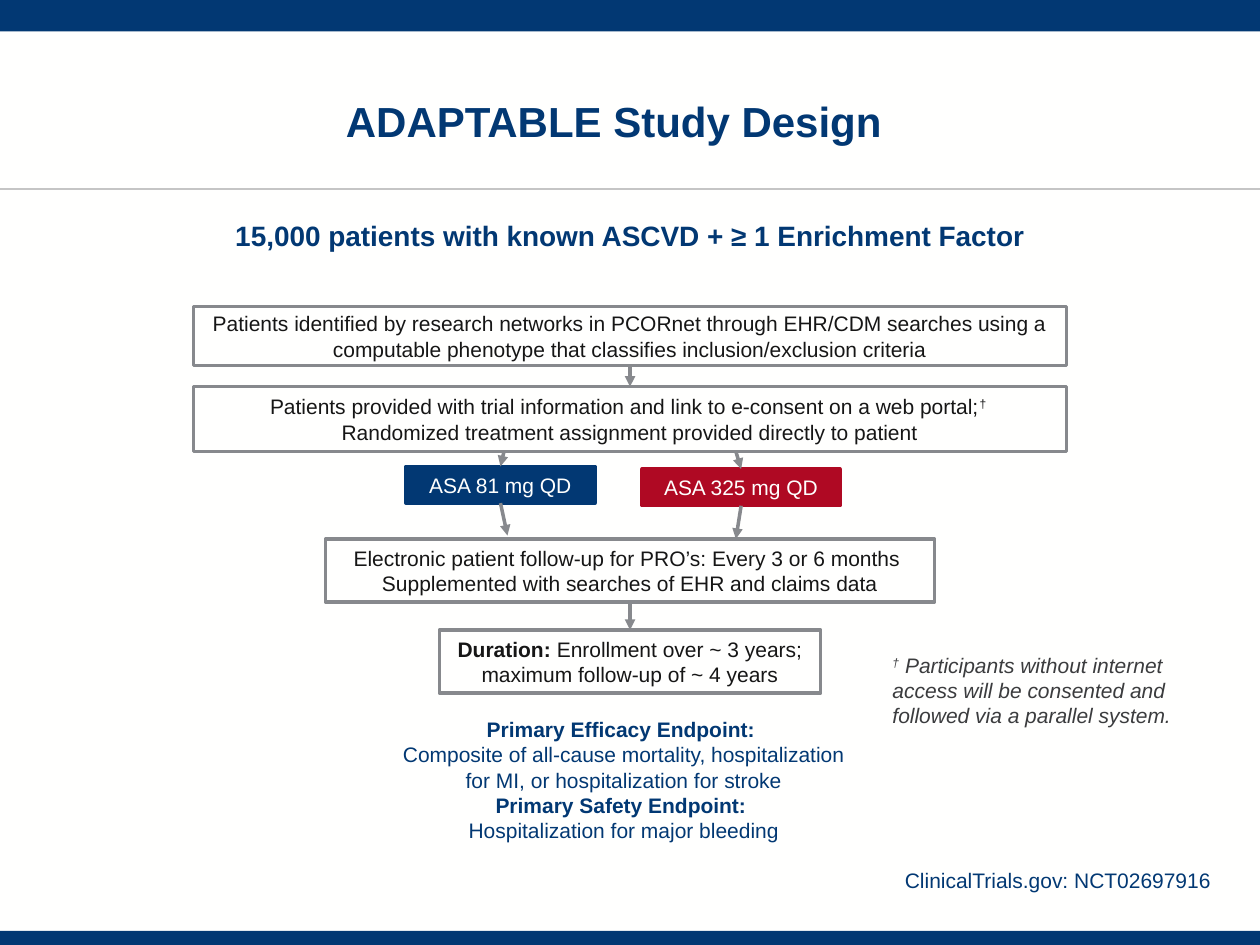
from dataclasses import dataclass

from lxml import etree
from pptx import Presentation
from pptx.dml.color import RGBColor
from pptx.enum.shapes import MSO_CONNECTOR, MSO_SHAPE
from pptx.enum.text import MSO_ANCHOR, MSO_AUTO_SIZE, PP_ALIGN
from pptx.oxml.ns import qn
from pptx.util import Pt

RECTANGLE = MSO_SHAPE.RECTANGLE
STRAIGHT = MSO_CONNECTOR.STRAIGHT
LEFT, CENTER = PP_ALIGN.LEFT, PP_ALIGN.CENTER
TOP, MIDDLE, BOTTOM = MSO_ANCHOR.TOP, MSO_ANCHOR.MIDDLE, MSO_ANCHOR.BOTTOM
SIDE_TOP, SIDE_BOTTOM = 0, 2
WIDTH, HEIGHT = 720, 540


@dataclass(frozen=True)
class Theme:
    font: str = "Arial"
    navy: str = "023873"
    red: str = "AF0923"
    gray: str = "87898D"
    rule: str = "C5C5C5"
    ink: str = "161616"
    note: str = "3B3C3E"
    paper: str = "FFFFFE"
    title_size: int = 24
    heading_size: int = 16
    body_size: int = 12


THEME = Theme()
BOLD = {"bold": True}
SUPERSCRIPT = {"superscript": True}


def color(value):
    return RGBColor.from_string(value)


def format_frame(frame, anchor, inset):
    """Set wrapping, anchor and margins; inset is (horizontal, vertical)."""
    horizontal, vertical = inset
    settings = {
        "word_wrap": True, "auto_size": MSO_AUTO_SIZE.NONE, "vertical_anchor": anchor,
        "margin_left": Pt(horizontal), "margin_right": Pt(horizontal),
        "margin_top": Pt(vertical), "margin_bottom": Pt(vertical),
    }
    for name, value in settings.items():
        setattr(frame, name, value)


def write_text(frame, paragraphs, ink, size=THEME.body_size, align=CENTER,
               spacing=1.0, **base):
    """Fill a frame; each paragraph is a list of (text, format) runs."""
    for index, runs in enumerate(paragraphs):
        paragraph = frame.paragraphs[0] if index == 0 else frame.add_paragraph()
        paragraph.alignment = align
        paragraph.line_spacing = spacing
        paragraph.space_before = Pt(0)
        for text, extra in runs:
            run = paragraph.add_run()
            run.text = text
            values = {"name": THEME.font, "size": Pt(size), "bold": False, **base, **extra}
            raised = values.pop("superscript", False)
            for name, value in values.items():
                setattr(run.font, name, value)
            run.font.color.rgb = color(ink)
            if raised:
                run._r.get_or_add_rPr().set("baseline", "30000")


def add_text(slide, box, paragraphs, ink, anchor=TOP, inset=(7.2, 3.6), **style):
    shape = slide.shapes.add_textbox(*map(Pt, box))
    format_frame(shape.text_frame, anchor, inset)
    write_text(shape.text_frame, paragraphs, ink, **style)


def add_box(slide, box, fill, line=None):
    shape = slide.shapes.add_shape(RECTANGLE, *map(Pt, box))
    shape.shadow.inherit = False
    shape.fill.solid()
    shape.fill.fore_color.rgb = color(fill)
    if line:
        shape.line.color.rgb = color(line)
        shape.line.width = Pt(2)
    else:
        shape.line.fill.background()
    return shape


def add_step(slide, box, paragraphs, fill=THEME.paper, line=THEME.gray, ink=THEME.ink):
    shape = add_box(slide, box, fill, line)
    format_frame(shape.text_frame, MIDDLE, (7.2, 3.6))
    write_text(shape.text_frame, paragraphs, ink)
    return shape


def add_line(slide, start, end, line, width):
    connector = slide.shapes.add_connector(STRAIGHT, *map(Pt, (*start, *end)))
    connector.line.color.rgb = color(line)
    connector.line.width = Pt(width)
    etree.SubElement(connector._element.spPr, qn("a:effectLst"))
    return connector


def add_arrow(slide, source, target):
    """Join shapes at bottom and top middles; a point leaves that end free."""
    free_start = source if isinstance(source, tuple) else (0, 0)
    free_end = target if isinstance(target, tuple) else (0, 0)
    connector = add_line(slide, free_start, free_end, THEME.gray, 2)
    if not isinstance(source, tuple):
        connector.begin_connect(source, SIDE_BOTTOM)
    if not isinstance(target, tuple):
        connector.end_connect(target, SIDE_TOP)
    etree.SubElement(connector.line._get_or_add_ln(), qn("a:tailEnd"), type="triangle")


def centered(top, width, height):
    return (WIDTH - width) / 2, top, width, height


def add_frame(slide):
    slide.background.fill.solid()
    slide.background.fill.fore_color.rgb = color(THEME.paper)
    add_line(slide, (0, 108), (WIDTH, 108), THEME.rule, 0.75)
    for top, height in ((0, 18), (532, 8)):
        add_box(slide, (0, top, WIDTH, height), THEME.navy)


def add_headings(slide, title_box, heading_box):
    title = slide.shapes.title
    title.left, title.top, title.width, title.height = map(Pt, title_box)
    format_frame(title.text_frame, BOTTOM, (0, 0))
    write_text(title.text_frame, [[("ADAPTABLE Study Design", BOLD)]], THEME.navy,
               size=THEME.title_size, spacing=0.9)
    heading = "15,000 patients with known ASCVD + ≥ 1 Enrichment Factor"
    add_text(slide, heading_box, [[(heading, BOLD)]], THEME.navy, inset=(0, 0),
             size=THEME.heading_size, spacing=0.95)


def add_flow(slide, top):
    # Steps, from screening to follow-up
    screening = add_step(slide, centered(top, 499, 34), [[(
        "Patients identified by research networks in PCORnet through EHR/CDM searches "
        "using a computable phenotype that classifies inclusion/exclusion criteria", {})]])
    consent = add_step(slide, centered(top + 46, 499, 37), [
        [("Patients provided with trial information and link to e-consent on a web portal;", {}),
         ("† ", SUPERSCRIPT)],
        [("Randomized treatment assignment provided directly to patient", {})]])
    follow_up = add_step(slide, centered(top + 133, 348, 36), [
        [("Electronic patient follow-up for PRO’s: Every 3 or 6 months ", {})],
        [("Supplemented with searches of EHR and claims data", {})]])
    duration = add_step(slide, centered(top + 185, 218, 36), [
        [("Duration: ", BOLD),
         ("Enrollment over ~ 3 years; maximum follow-up of ~ 4 years", {})]])

    # Treatment arms, each with its slanted arrows in and out
    arms = (
        ("ASA 81 mg QD", (232, top + 91.5, 108, 21), THEME.navy, 288, (290, top + 131)),
        ("ASA 325 mg QD", (367, top + 93, 113, 21), THEME.red, 420.5, (420.5, top + 133)),
    )
    for label, box, fill, start, end in arms:
        arm = add_step(slide, box, [[(label, {})]], fill, fill, THEME.paper)
        add_arrow(slide, (start, top + 83), arm)
        add_arrow(slide, arm, end)

    add_arrow(slide, screening, consent)
    add_arrow(slide, follow_up, duration)


def add_notes(slide, endpoint_box, registry_box, footnote_box):
    add_text(slide, endpoint_box, [
        [("Primary Efficacy Endpoint: ", BOLD)],
        [("Composite of all-cause mortality, hospitalization for MI, "
          "or hospitalization for stroke", {})],
        [("Primary Safety Endpoint: ", BOLD)],
        [("Hospitalization for major bleeding", {})]], THEME.navy)
    add_text(slide, registry_box, [[("ClinicalTrials.gov: NCT02697916", {})]],
             THEME.navy, align=LEFT)
    add_text(slide, footnote_box, [
        [("†", SUPERSCRIPT),
         (" Participants without internet access will be consented and followed "
          "via a parallel system.", {})]],
        THEME.note, anchor=BOTTOM, inset=(0, 0), align=LEFT, italic=True)


def main():
    presentation = Presentation()
    presentation.slide_width, presentation.slide_height = Pt(WIDTH), Pt(HEIGHT)
    slide = presentation.slides.add_slide(presentation.slide_layouts[5])
    add_frame(slide)
    add_headings(slide, (125, 16, 451.5, 67.5), centered(126.5, 469, 24.5))
    add_flow(slide, 175)
    add_notes(slide, (218, 406, 277, 80), (510, 492, 201.5, 36), (510, 372, 164, 44))
    presentation.save("out.pptx")


if __name__ == "__main__":
    main()
